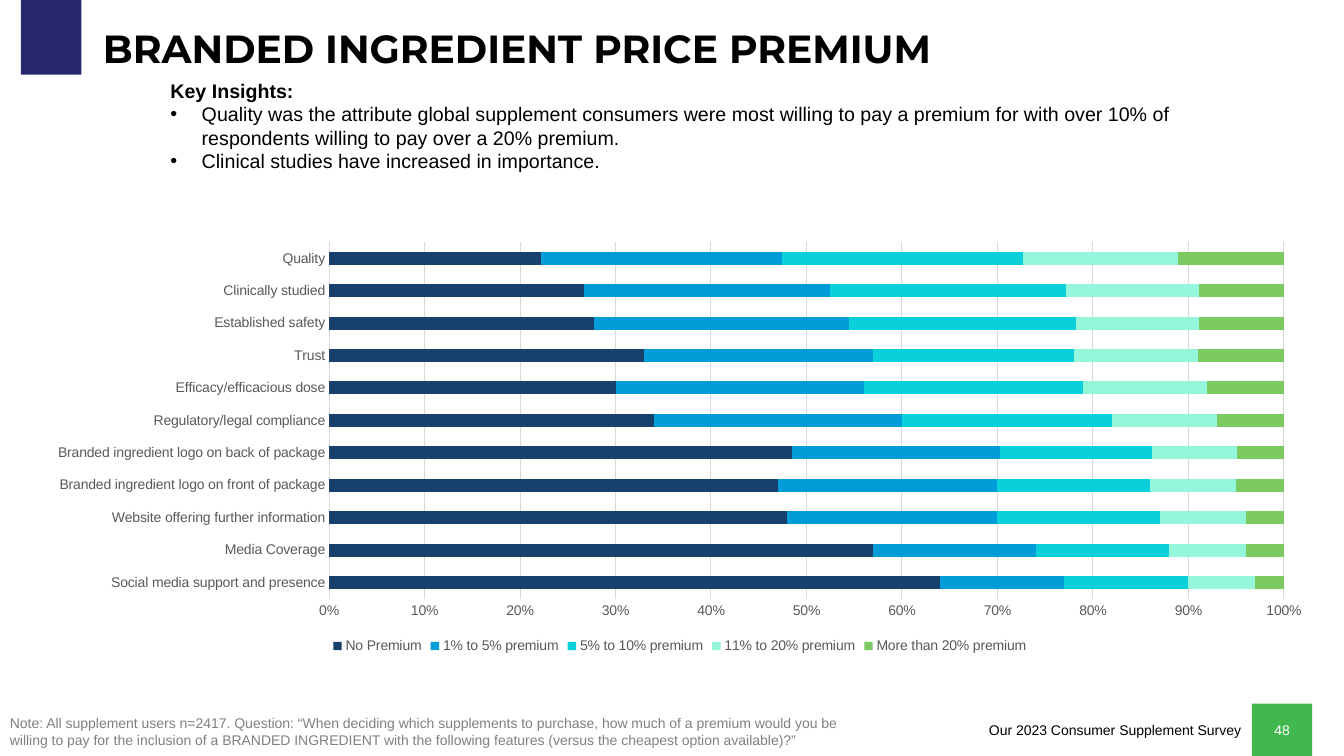
from lxml import etree
from pptx import Presentation
from pptx.chart.data import CategoryChartData
from pptx.dml.color import RGBColor
from pptx.enum import chart as ch, shapes, text
from pptx.oxml import ns
from pptx.util import Cm, Pt

HUES = {
    "navy": "27276E", "green": "42B74D", "black": "000000", "white": "FFFFFF",
    "note": "808080", "label": "595959", "grid": "D9D9D9",
}
CATS = [
    "Social media support and presence", "Media Coverage",
    "Website offering further information",
    "Branded ingredient logo on front of package",
    "Branded ingredient logo on back of package",
    "Regulatory/legal compliance", "Efficacy/efficacious dose", "Trust",
    "Established safety", "Clinically studied", "Quality",
]
TIERS = [
    ("No Premium", "17406D", [64, 57, 48, 47, 49, 34, 30, 33, 28, 27, 22]),
    ("1% to 5% premium", "009DD9", [13, 17, 22, 23, 22, 26, 26, 24, 27, 26, 25]),
    ("5% to 10% premium", "0BD0D9", [13, 14, 17, 16, 16, 22, 23, 21, 24, 25, 25]),
    ("11% to 20% premium", "94F7DC", [7, 8, 9, 9, 9, 11, 13, 13, 13, 14, 16]),
    ("More than 20% premium", "7CCA62", [3, 4, 4, 5, 5, 7, 8, 9, 9, 9, 11]),
]
LEFT, MID, RIGHT = text.PP_ALIGN.LEFT, text.PP_ALIGN.CENTER, text.PP_ALIGN.RIGHT


def rgb(hue):
    return RGBColor.from_string(HUES.get(hue, hue))


class Deck:
    def __init__(self, face="Arial"):
        self.face = face
        self.prs = Presentation()
        self.prs.slide_width, self.prs.slide_height = Cm(33.87), Cm(19.05)
        self.slide = self.prs.slides.add_slide(self.prs.slide_layouts[1])

    def style(self, font, size, hue, bold=False, face=None):
        font.name, font.size, font.bold = face or self.face, Pt(size), bold
        font.color.rgb = rgb(hue)

    def place(self, shape, box):
        shape.left, shape.top, shape.width, shape.height = map(Cm, box)

    def title(self, words, box):
        shape = self.slide.shapes.title
        self.place(shape, box)
        frame = shape.text_frame
        frame.text = words
        frame.auto_size = text.MSO_AUTO_SIZE.NONE
        frame.vertical_anchor = text.MSO_ANCHOR.MIDDLE
        para = frame.paragraphs[0]
        para.alignment, para.line_spacing = LEFT, 0.9
        self.style(para.runs[0].font, 28, "black", True, "Montserrat")

    def points(self, head, items, box):
        """Fill the body placeholder with a bold heading and bulleted items."""
        shape = self.slide.placeholders[1]
        self.place(shape, box)
        frame = shape.text_frame
        frame.text = "\n".join([head, *items])
        frame.auto_size = text.MSO_AUTO_SIZE.NONE
        for i, para in enumerate(frame.paragraphs):
            para.space_before = Pt(0)
            props = para._p.get_or_add_pPr()
            inset = Cm(0.79) if i else 0
            props.set("marL", str(inset))
            props.set("indent", str(-inset))
            if i:
                etree.SubElement(props, ns.qn("a:buChar")).set("char", "•")
            else:
                etree.SubElement(props, ns.qn("a:buNone"))
            self.style(para.runs[0].font, 14, "black", i == 0)

    def block(self, hue, box, words=""):
        shape = self.slide.shapes.add_shape(
            shapes.MSO_SHAPE.RECTANGLE, *map(Cm, box))
        shape.shadow.inherit = False
        shape.fill.solid()
        shape.fill.fore_color.rgb = rgb(hue)
        shape.line.fill.background()
        if words:
            self.fill(shape.text_frame, words, "white", MID)

    def label(self, words, hue, box, align=LEFT):
        frame = self.slide.shapes.add_textbox(*map(Cm, box)).text_frame
        frame.word_wrap = True
        self.fill(frame, words, hue, align)

    def fill(self, frame, words, hue, align):
        frame.text = words
        para = frame.paragraphs[0]
        para.alignment = align
        self.style(para.runs[0].font, 10, hue)

    def bars(self, cats, tiers, box):
        data = CategoryChartData()
        data.categories = cats
        for name, _, vals in tiers:
            data.add_series(name, vals)
        chart = self.slide.shapes.add_chart(
            ch.XL_CHART_TYPE.BAR_STACKED_100, *map(Cm, box), data).chart
        self.style(chart.font, 10, "label")
        chart.has_title = False
        chart.has_legend = True
        chart.legend.position = ch.XL_LEGEND_POSITION.BOTTOM
        chart.legend.include_in_layout = False
        self.style(chart.legend.font, 10, "label")

        plot = chart.plots[0]
        plot.gap_width, plot.overlap, plot.vary_by_categories = 150, 100, False
        for series, (_, hue, _) in zip(plot.series, tiers):
            series.format.fill.solid()
            series.format.fill.fore_color.rgb = rgb(hue)

        for axis in (chart.category_axis, chart.value_axis):
            axis.major_tick_mark = axis.minor_tick_mark = ch.XL_TICK_MARK.NONE
            self.style(axis.tick_labels.font, 10, "label")
        cat, val = chart.category_axis, chart.value_axis
        val.has_major_gridlines = True
        for line in (cat.format.line, val.major_gridlines.format.line):
            line.color.rgb, line.width = rgb("grid"), Pt(0.75)
        val.format.line.fill.background()
        val.tick_labels.number_format = "0%"
        val.tick_labels.number_format_is_linked = False


def main():
    deck = Deck()
    deck.block("navy", (0.53, -0.13, 1.52, 2.01))
    deck.label("Our 2023 Consumer Supplement Survey", "black",
               (20.12, 18.06, 11.4, 0.69), RIGHT)
    deck.block("green", (31.55, 17.73, 1.52, 1.32), "48")
    deck.title("BRANDED INGREDIENT PRICE PREMIUM", (2.34, 0.64, 29.21, 1.27))
    deck.bars(CATS, TIERS, (0.81, 5.89, 32.64, 10.69))
    deck.points("Key Insights:", [
        "Quality was the attribute global supplement consumers were most "
        "willing to pay a premium for with over 10% of respondents willing "
        "to pay over a 20% premium.",
        "Clinical studies have increased in importance.",
    ], (4.04, 1.85, 28.58, 3.25))
    deck.label(
        "Note: All supplement users n=2417. Question: “When deciding which "
        "supplements to purchase, how much of a premium would you be willing "
        "to pay for the inclusion of a BRANDED INGREDIENT with the following "
        "features (versus the cheapest option available)?”",
        "note", (0, 17.88, 22.3, 1.12))
    deck.prs.save("out.pptx")


if __name__ == "__main__":
    main()
